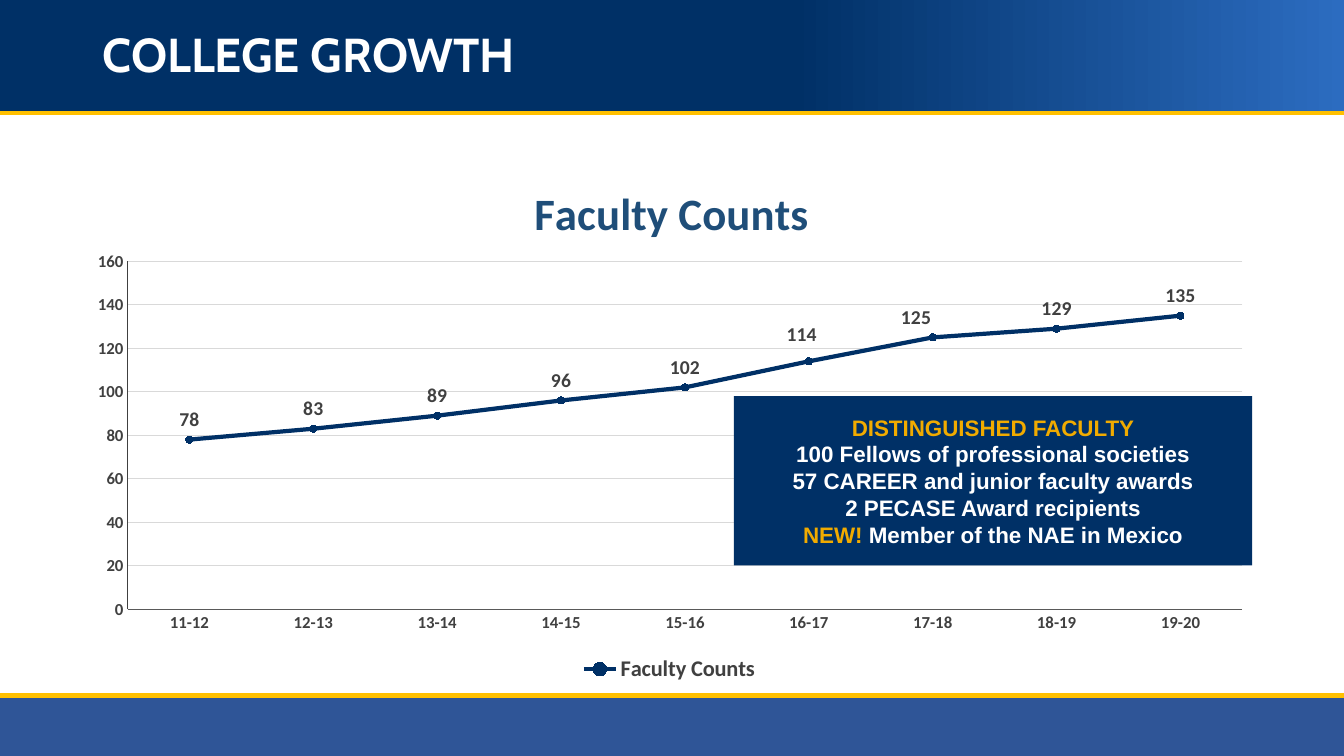
from typing import NamedTuple

import pptx
import pptx.chart.data
import pptx.dml.color
import pptx.enum.chart
import pptx.enum.shapes
import pptx.enum.text
import pptx.util
from lxml import etree

Inches = pptx.util.Inches
Pt = pptx.util.Pt
KINDS = pptx.enum.chart

HUES = {
    "navy": "003066", "blue": "2C6CC0", "foot": "2F5597", "gold": "FFC000",
    "amber": "F1AB00", "white": "FFFFFF", "title": "1F4E79",
    "text": "404040", "axis": "595959", "grid": "D9D9D9",
}


class Box(NamedTuple):
    x: float
    y: float
    w: float
    h: float
    hue: str


class Run(NamedTuple):
    text: str
    hue: str = "white"


HEAD = Box(-0.03, -0.01, 13.36, 1.12, "navy")
FOOT = Box(-0.03, 6.9, 13.39, 0.61, "foot")
CARD = Box(7.28, 3.93, 5.14, 1.68, "navy")
RULES = (1.12, 6.9)

YEARS = [f"{year}-{year + 1}" for year in range(11, 20)]
COUNTS = [78, 83, 89, 96, 102, 114, 125, 129, 135]
SHIFTS = {5: (-0.006, -0.013), 6: (-0.014, 0)}

LINES = [
    [Run("DISTINGUISHED FACULTY", "amber")],
    [Run("100 Fellows of professional societies")],
    [Run("57 CAREER and junior faculty awards")],
    [Run("2 PECASE Award recipients")],
    [Run("NEW! ", "amber"), Run("Member of the NAE in Mexico")],
]


def color(hue: str) -> pptx.dml.color.RGBColor:
    return pptx.dml.color.RGBColor.from_string(HUES[hue])


def style(font, size: float, hue: str, face: str = "Calibri") -> None:
    font.size, font.bold, font.name = Pt(size), True, face
    font.color.rgb = color(hue)


def stroke(line, hue: str, width: float) -> None:
    line.color.rgb = color(hue)
    line.width = Pt(width)


def write(para, text: str, *, size: float, hue: str, face: str) -> None:
    run = para.add_run()
    run.text = text
    style(run.font, size, hue, face)


def block(slide, box: Box):
    shape = slide.shapes.add_shape(
        pptx.enum.shapes.MSO_SHAPE.RECTANGLE, *map(Inches, box[:4]))
    shape.shadow.inherit = False
    shape.fill.solid()
    shape.fill.fore_color.rgb = color(box.hue)
    shape.line.fill.background()
    return shape


def rule(slide, y: float) -> None:
    line = slide.shapes.add_connector(
        pptx.enum.shapes.MSO_CONNECTOR.STRAIGHT,
        Inches(-0.04), Inches(y), Inches(13.36), Inches(y))
    stroke(line.line, "gold", 3)
    etree.SubElement(line._element.spPr, pptx.oxml.ns.qn("a:effectLst"))


def place(part, index: int, **marks) -> None:
    """Give a chart part a manual layout."""
    tag = pptx.oxml.ns.qn
    for old in part.findall(tag("c:layout")):
        part.remove(old)
    layout = etree.Element(tag("c:layout"))
    manual = etree.SubElement(layout, tag("c:manualLayout"))
    for name, value in marks.items():
        etree.SubElement(manual, tag(f"c:{name}")).set("val", str(value))
    part.insert(index, layout)


def draw_chart(slide) -> None:
    data = pptx.chart.data.CategoryChartData()
    data.categories = YEARS
    data.add_series("Faculty Counts", COUNTS)
    chart = slide.shapes.add_chart(
        KINDS.XL_CHART_TYPE.LINE_MARKERS, Inches(0.72), Inches(1.4),
        Inches(11.84), Inches(5.42), data).chart
    chart.font.size, chart.font.name = Pt(10), "Calibri"

    # Title, legend and plot area
    title = chart.chart_title
    write(title.text_frame.paragraphs[0], "Faculty Counts",
          size=32, hue="title", face="Calibri")
    title.include_in_layout = False
    place(title._element, 1, xMode="edge", yMode="edge", x=0.38, y=0.06)
    chart.has_legend = True
    chart.legend.position = KINDS.XL_LEGEND_POSITION.BOTTOM
    chart.legend.include_in_layout = False
    style(chart.legend.font, 16, "text")
    place(chart._chartSpace.chart.plotArea, 0, layoutTarget="inner",
          xMode="edge", yMode="edge", x=0.046, y=0.22, w=0.934, h=0.637)

    # Axes
    for axis, hue in ((chart.category_axis, "axis"), (chart.value_axis, "text")):
        axis.major_tick_mark = axis.minor_tick_mark = KINDS.XL_TICK_MARK.NONE
        style(axis.tick_labels.font, 12, "text")
        stroke(axis.format.line, hue, 0.75)
    scale = chart.value_axis
    scale.minimum_scale, scale.maximum_scale, scale.major_unit = 0, 160, 20
    stroke(scale.major_gridlines.format.line, "grid", 0.75)

    # Series with its labels
    plot = chart.plots[0]
    plot.vary_by_categories = False
    series = plot.series[0]
    series.smooth = False
    stroke(series.format.line, "navy", 3)
    series.marker.style, series.marker.size = KINDS.XL_MARKER_STYLE.CIRCLE, 5
    series.marker.format.fill.solid()
    series.marker.format.fill.fore_color.rgb = color("navy")
    stroke(series.marker.format.line, "navy", 0.75)
    labels = series.data_labels
    labels.show_value = True
    moved = [series.points[i].data_label for i in SHIFTS]
    for label in (labels, *moved):
        label.position = KINDS.XL_LABEL_POSITION.ABOVE
        style(label.font, 14, "text")
    for part, (x, y) in zip(labels._element.xpath("c:dLbl"), SHIFTS.values()):
        place(part, 1, x=x, y=y)


def main() -> None:
    deck = pptx.Presentation()
    deck.slide_width, deck.slide_height = Inches(13.33), Inches(7.5)
    slide = deck.slides.add_slide(deck.slide_layouts[6])
    middle = pptx.enum.text.MSO_ANCHOR.MIDDLE

    # Bands and gold rules
    block(slide, FOOT)
    fill = block(slide, HEAD).fill
    fill.gradient()
    fill.gradient_angle = 0
    for stop, (spot, hue) in zip(fill.gradient_stops,
                                 ((0.59, "navy"), (1, "blue"))):
        stop.position = spot
        stop.color.rgb = color(hue)
    for y in RULES:
        rule(slide, y)

    # Heading
    frame = slide.shapes.add_textbox(
        Inches(0.92), Inches(0.18), Inches(11.5), Inches(0.78)).text_frame
    frame.word_wrap, frame.vertical_anchor = True, middle
    frame.paragraphs[0].line_spacing = 0.9
    write(frame.paragraphs[0], "COLLEGE GROWTH",
          size=34, hue="white", face="Cabin")

    draw_chart(slide)

    # Faculty card
    frame = block(slide, CARD).text_frame
    frame.word_wrap, frame.vertical_anchor = True, middle
    for i, runs in enumerate(LINES):
        para = frame.add_paragraph() if i else frame.paragraphs[0]
        para.alignment = pptx.enum.text.PP_ALIGN.CENTER
        for run in runs:
            write(para, run.text, size=16, hue=run.hue, face="Arial")

    deck.save("out.pptx")


if __name__ == "__main__":
    main()
